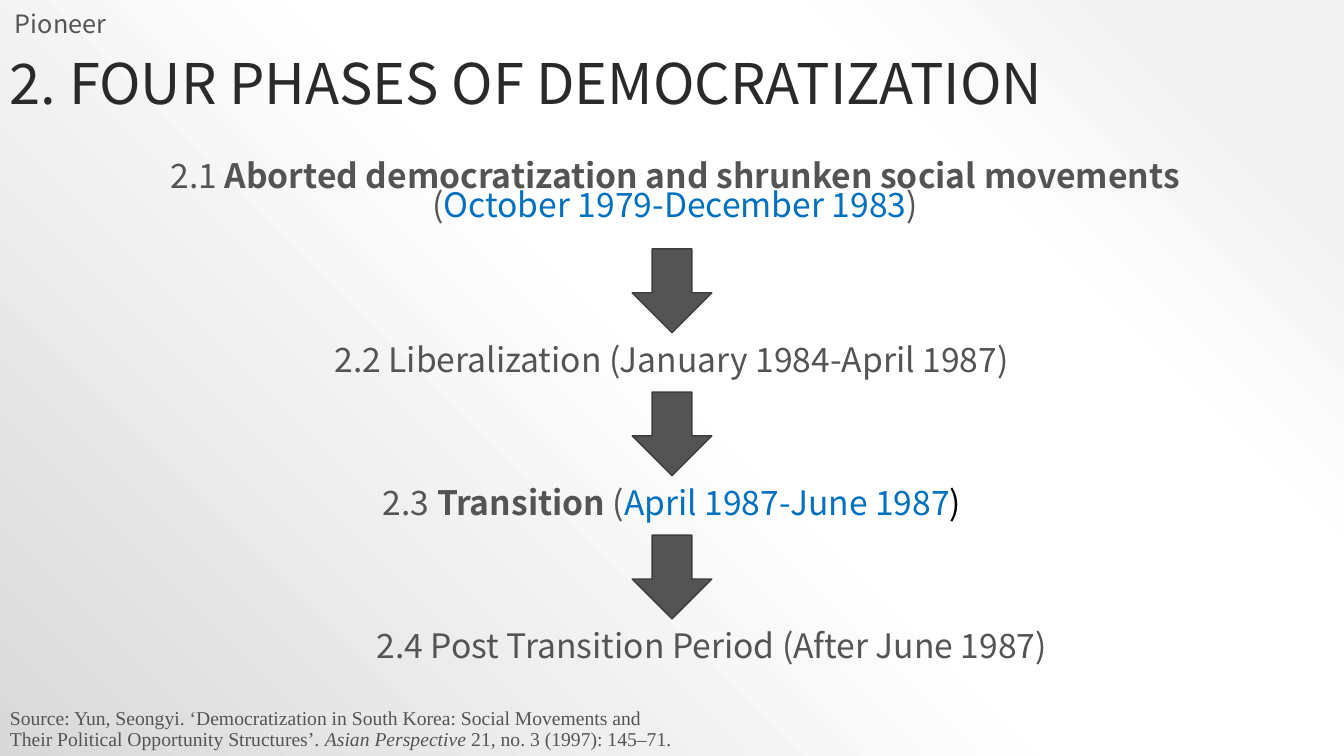
from lxml.etree import SubElement as Sub
from pptx import Presentation
from pptx.dml.color import RGBColor as Rgb
from pptx.enum.shapes import MSO_SHAPE as Shape
from pptx.enum.text import MSO_ANCHOR as Anchor, MSO_AUTO_SIZE as Fit, PP_ALIGN as Align
from pptx.oxml.ns import qn
from pptx.util import Inches, Pt

THEME = {
    "sans": "Noto Sans CJK SC", "serif": "Times New Roman",
    "gray": "545454", "dark": "2A2A2A", "blue": "0070C0", "black": "000000",
    "edge": "3E3E3E",
    "title": 40, "body": 24, "label": 18, "note": 14,
    "back": [(10, "F2F2F2"), (28, "FFFFFF"), (48, "FFFFFF"), (100, "D9D9D9")],
}

LABEL = [("Pioneer", {})]
TITLE = [("2. FOUR PHASES OF DEMOCRATIZATION", {})]
FIRST = [
    ("2.1 ", {}),
    ("Aborted democratization and shrunken social movements ", {"bold": True}),
    ("(", {}),
    ("October 1979-December 1983", {"color": "blue"}),
    (")", {}),
]
PHASES = [
    (1.12, 11.08, [("2.2 Liberalization (January 1984-April 1987)", {})]),
    (2.57, 8.19, [
        ("2.3 ", {}),
        ("Transition", {"bold": True}),
        (" (", {}),
        ("April 1987-June 1987", {"color": "blue"}),
        (")", {"color": "black"}),
    ]),
    (3.24, 7.64, [("2.4 Post Transition Period (After June 1987)", {})]),
]
SOURCE = [
    ("Source: Yun, Seongyi. ‘Democratization in South Korea: Social Movements and "
     "Their Political Opportunity Structures’. ", {}),
    ("Asian Perspective", {"italic": True}),
    (" 21, no. 3 (1997): 145–71.", {}),
]

WIDE, HIGH = 13.33, 7.5
ARROW_W, ARROW_H = 0.79, 0.83
ARROW_TOP, TEXT_TOP, STEP = 2.47, 3.36, 1.42


def tint(name):
    return Rgb.from_string(THEME[name])


def write(slide, box, runs, size="body", font="sans", color="gray",
          align=Align.LEFT, anchor=Anchor.TOP, space=0.9, grow=False, left=0):
    frame = slide.shapes.add_textbox(*map(Inches, box)).text_frame
    frame.word_wrap = True
    frame.vertical_anchor = anchor
    frame.auto_size = Fit.SHAPE_TO_FIT_TEXT if grow else Fit.NONE
    para = frame.paragraphs[0]
    para.alignment = align
    para.line_spacing = space
    if left:
        para._p.get_or_add_pPr().set("marL", str(Inches(left)))
    for text, style in runs:
        run = para.add_run()
        run.text = text
        run.font.name = THEME[font]
        run.font.size = Pt(THEME[size])
        run.font.bold = style.get("bold", False)
        run.font.italic = style.get("italic", False)
        run.font.color.rgb = tint(style.get("color", color))


def paint(slide):
    slide.background.fill.gradient()
    grad = next(slide._element.iter(qn("a:gradFill")))
    for child in list(grad):
        grad.remove(child)
    stops = Sub(grad, qn("a:gsLst"))
    for place, color in THEME["back"]:
        stop = Sub(stops, qn("a:gs"), pos=str(place * 1000))
        Sub(stop, qn("a:srgbClr"), val=color)
    round_ = Sub(grad, qn("a:path"), path="circle")
    Sub(round_, qn("a:fillToRect"), l="100000", b="100000")


def arrow(slide, top):
    box = ((WIDE - ARROW_W) / 2, top, ARROW_W, ARROW_H)
    shape = slide.shapes.add_shape(Shape.DOWN_ARROW, *map(Inches, box))
    shape.shadow.inherit = False
    shape.fill.solid()
    shape.fill.fore_color.rgb = tint("gray")
    shape.line.color.rgb = tint("edge")
    shape.line.width = Pt(1)


def main():
    deck = Presentation()
    deck.slide_width, deck.slide_height = Inches(WIDE), Inches(HIGH)
    slide = deck.slides.add_slide(deck.slide_layouts[6])
    paint(slide)
    write(slide, (0.05, 0.07, 6.66, 0.37), LABEL, size="label", grow=True)
    write(slide, (0, 0.13, 11.58, 1.45), TITLE, size="title", color="dark",
          anchor=Anchor.MIDDLE)
    write(slide, (0.96, 1.58, 11.42, 0.83), FIRST, align=Align.CENTER,
          space=0.74, left=0.05)
    for i, (left, width, runs) in enumerate(PHASES):
        arrow(slide, ARROW_TOP + i * STEP)
        write(slide, (left, TEXT_TOP + i * STEP, width, 0.46), runs,
              align=Align.CENTER, grow=True)
    write(slide, (0, 6.98, 6.93, 0.53), SOURCE, size="note", font="serif", grow=True)
    deck.save("out.pptx")


if __name__ == "__main__":
    main()
